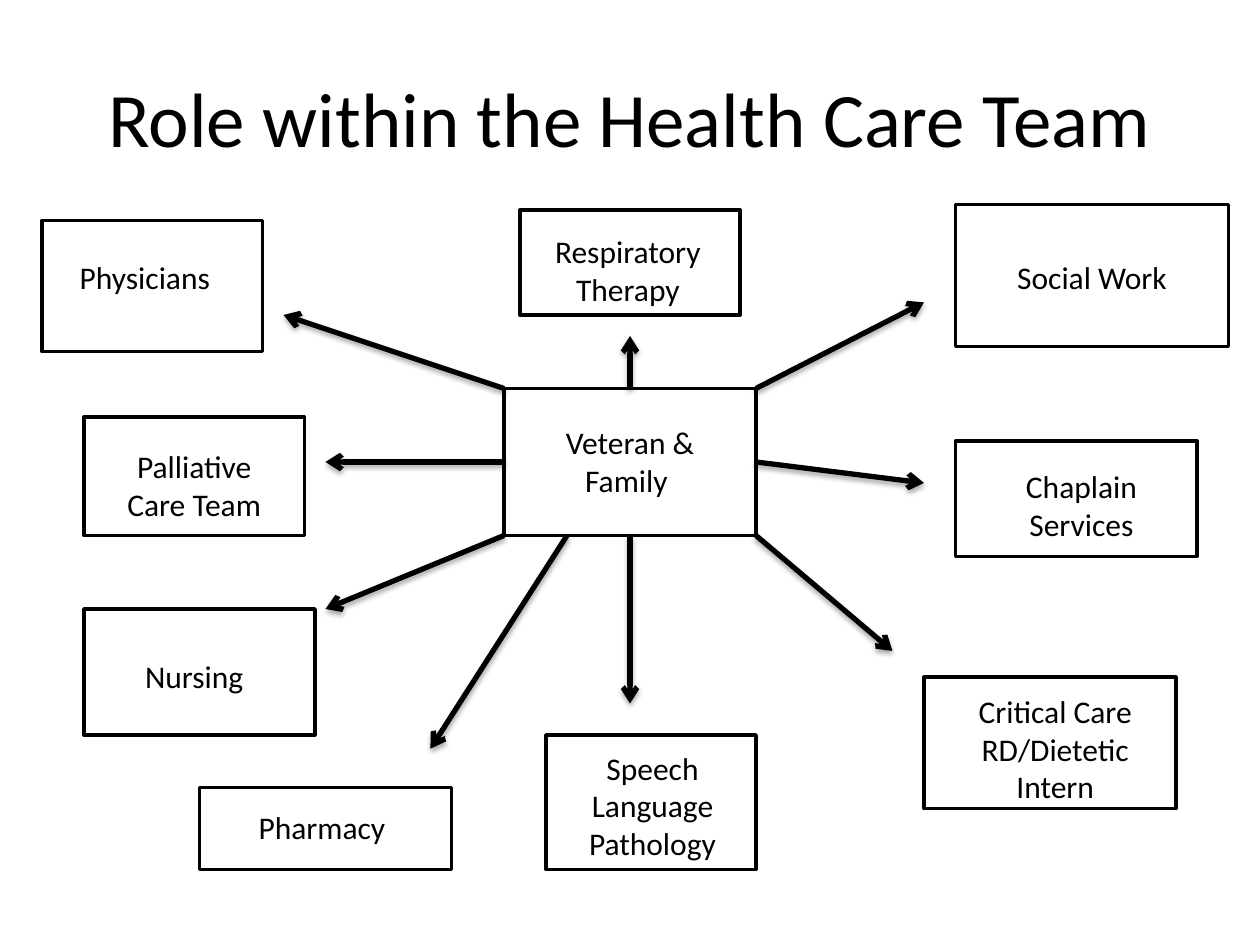
from lxml import etree
from pptx import Presentation, util as u
from pptx.dml.color import RGBColor
from pptx.enum import shapes, text
from pptx.oxml.ns import qn

COLORS = {"ink": "000000", "paper": "FFFFFF"}
INK, PAPER = (RGBColor.from_string(COLORS[name]) for name in ("ink", "paper"))
COLUMNS, ROWS = 120, 90
TOP, LEFT, BOTTOM, RIGHT = range(4)

deck = Presentation()
deck.slide_width, deck.slide_height = u.Inches(10), u.Inches(7.5)
page = deck.slides.add_slide(deck.slide_layouts[5])


def place(*cells):
    """Turn alternating column and row numbers into slide lengths."""
    sizes = (deck.slide_width / COLUMNS, deck.slide_height / ROWS)
    return [round(cell * sizes[i % 2]) for i, cell in enumerate(cells)]


def write(box, words, size):
    frame = box.text_frame
    frame.word_wrap = True
    para = frame.paragraphs[0]
    para.alignment = text.PP_ALIGN.CENTER
    span = para.add_run()
    span.text = words
    for key, value in {"name": "Calibri", "size": u.Pt(size)}.items():
        setattr(span.font, key, value)
    span.font.color.rgb = INK


title = page.shapes.title
for key, value in zip(("left", "top", "width", "height"), place(6, 3.6, 108, 15)):
    setattr(title, key, value)
title.text_frame.vertical_anchor = text.MSO_ANCHOR.MIDDLE
write(title, "Role within the Health Care Team", 44)

# Words, box, and label area, each as column, row, columns wide, rows high
members = [
    ("Veteran & Family ", (48, 37, 24, 14), (49.5, 39.7, 21, 8.5)),
    ("Physicians", (4, 21, 21, 12.5), (5.3, 24, 17, 4.8)),
    ("Respiratory Therapy", (49.5, 20, 21, 10), (49.3, 21.5, 21, 8.5)),
    ("Social Work", (91, 19.5, 26, 13.5), (94, 24, 20, 4.8)),
    ("Palliative Care Team", (8, 39.7, 21, 11.3), (10, 42, 17, 8.5)),
    ("Chaplain Services", (91, 42, 23, 11), (94, 43.9, 18, 8.5)),
    ("Nursing", (8, 58, 22, 12), (10, 62, 17, 5)),
    ("Pharmacy ", (19, 75, 24, 7.8), (21, 76.4, 20, 4.8)),
    ("Speech Language Pathology", (52, 70, 20, 12.8), (54, 70.7, 16.3, 12.1)),
    ("Critical Care RD/Dietetic Intern", (88, 64.5, 24, 12.5), (91, 65.3, 19, 12.1)),
]
boxes = []
for words, outline, label_area in members:
    box = page.shapes.add_shape(shapes.MSO_SHAPE.RECTANGLE, *place(*outline))
    box.shadow.inherit = False
    box.fill.solid()
    box.fill.fore_color.rgb = PAPER
    box.line.color.rgb = INK
    box.line.width = u.Pt(2)
    boxes.append(box)
    write(page.shapes.add_textbox(*place(*label_area)), words, 18)
family = boxes[0]

# Start, tip, and the side of the family box where the arrow is joined
arrows = [
    ((48, 37), (27, 30), None),
    ((60, 37), (60, 32), TOP),
    ((72, 37), (88, 28.8), None),
    ((48, 44), (31, 44), LEFT),
    ((72, 44), (88, 46), RIGHT),
    ((48, 51), (31, 58), None),
    ((54, 51), (41, 71.3), None),
    ((60, 51), (60, 67), BOTTOM),
    ((72, 51), (85, 62), None),
]
for start, tip, side in arrows:
    arrow = page.shapes.add_connector(
        shapes.MSO_CONNECTOR.STRAIGHT, *place(*start, *tip))
    if side is not None:
        arrow.begin_connect(family, side)
    arrow.line.color.rgb = INK
    arrow.line.width = u.Pt(3)
    etree.SubElement(arrow.line._get_or_add_ln(), qn("a:tailEnd"), type="arrow")
    effects = etree.SubElement(arrow._element.spPr, qn("a:effectLst"))
    shadow = etree.SubElement(
        effects, qn("a:outerShdw"), blurRad=str(u.Pt(3.1)), dist=str(u.Pt(1.8)),
        dir="5400000", rotWithShape="0")
    tint = etree.SubElement(shadow, qn("a:srgbClr"), val=COLORS["ink"])
    etree.SubElement(tint, qn("a:alpha"), val="35000")

deck.save("out.pptx")
